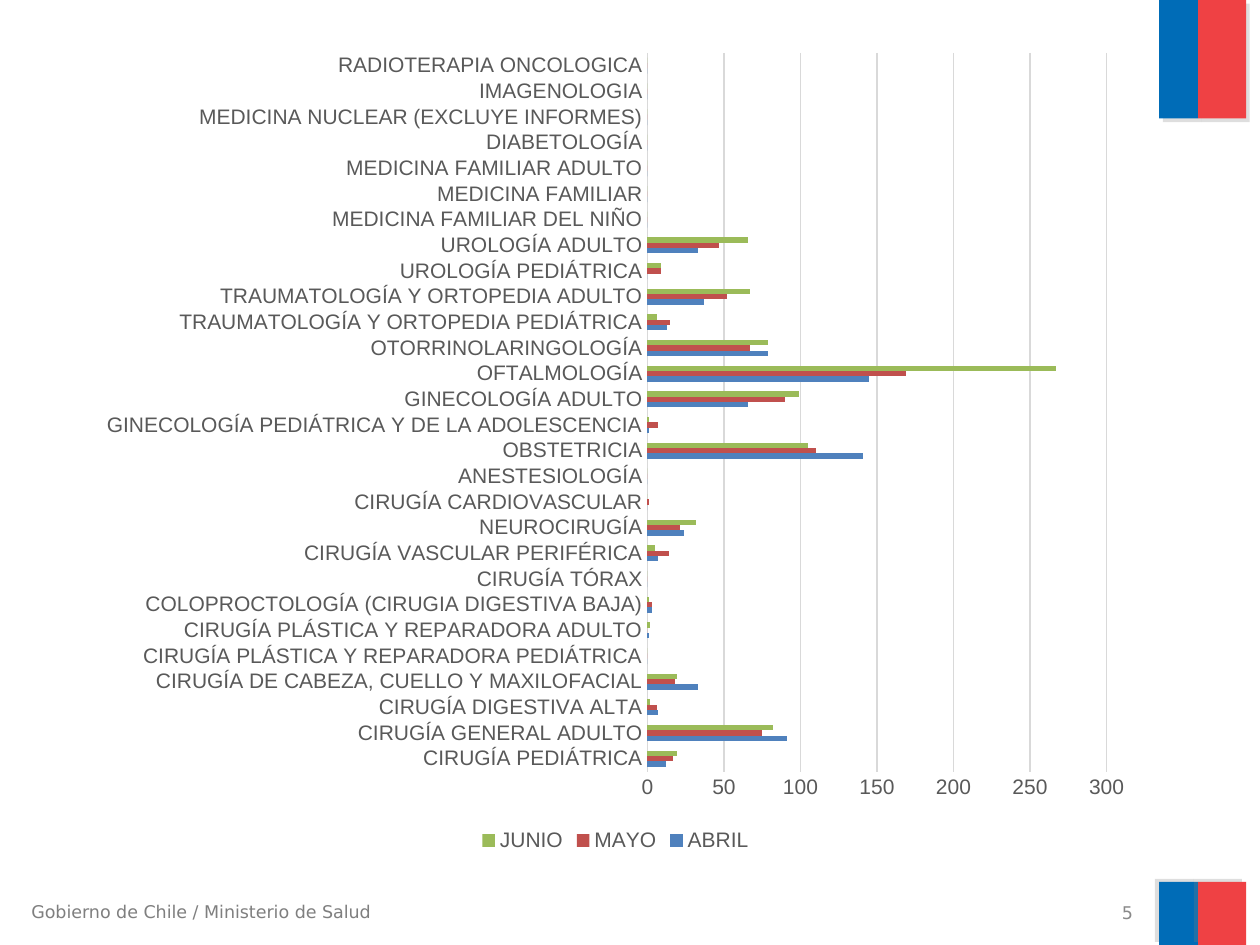
import pptx
import pptx.chart.data
import pptx.dml.color
import pptx.enum.chart
import pptx.enum.text
import pptx.oxml
import pptx.oxml.ns
import pptx.util

Inches = pptx.util.Inches
Pt = pptx.util.Pt
enum = pptx.enum.chart
ALIGN = pptx.enum.text.PP_ALIGN
ANCHOR = pptx.enum.text.MSO_ANCHOR

THEME = {
    "blue": "006CB7", "red": "EF4144", "shade": "808080",
    "foot": "7F7F7F", "page": "898989", "label": "595959", "grid": "D9D9D9",
    "months": ("4F81BD", "C0504D", "9BBB59"),
    "chart font": "Arial", "foot font": "DejaVu Sans",
    "chart size": 12, "foot size": 10, "line": 0.75,
}

MONTHS = ("ABRIL", "MAYO", "JUNIO")
ROWS = [
    ("CIRUGÍA PEDIÁTRICA", 12, 17, 19),
    ("CIRUGÍA GENERAL ADULTO", 91, 75, 82),
    ("CIRUGÍA DIGESTIVA ALTA", 7, 6, 2),
    ("CIRUGÍA DE CABEZA, CUELLO Y MAXILOFACIAL", 33, 18, 19),
    ("CIRUGÍA PLÁSTICA Y REPARADORA PEDIÁTRICA", 0, 0, 0),
    ("CIRUGÍA PLÁSTICA Y REPARADORA ADULTO", 1, 0, 2),
    ("COLOPROCTOLOGÍA (CIRUGIA DIGESTIVA BAJA)", 3, 3, 1),
    ("CIRUGÍA TÓRAX", 0, 0, 0),
    ("CIRUGÍA VASCULAR PERIFÉRICA", 7, 14, 5),
    ("NEUROCIRUGÍA", 24, 21, 32),
    ("CIRUGÍA CARDIOVASCULAR", 0, 1, 0),
    ("ANESTESIOLOGÍA", 0, 0, 0),
    ("OBSTETRICIA", 141, 110, 105),
    ("GINECOLOGÍA PEDIÁTRICA Y DE LA ADOLESCENCIA", 1, 7, 1),
    ("GINECOLOGÍA ADULTO", 66, 90, 99),
    ("OFTALMOLOGÍA", 145, 169, 267),
    ("OTORRINOLARINGOLOGÍA", 79, 67, 79),
    ("TRAUMATOLOGÍA Y ORTOPEDIA PEDIÁTRICA", 13, 15, 6),
    ("TRAUMATOLOGÍA Y ORTOPEDIA ADULTO", 37, 52, 67),
    ("UROLOGÍA PEDIÁTRICA", 0, 9, 9),
    ("UROLOGÍA ADULTO", 33, 47, 66),
    ("MEDICINA FAMILIAR DEL NIÑO", 0, 0, 0),
    ("MEDICINA FAMILIAR", 0, 0, 0),
    ("MEDICINA FAMILIAR ADULTO", 0, 0, 0),
    ("DIABETOLOGÍA", 0, 0, 0),
    ("MEDICINA NUCLEAR (EXCLUYE INFORMES)", 0, 0, 0),
    ("IMAGENOLOGIA", 0, 0, 0),
    ("RADIOTERAPIA ONCOLOGICA", 0, 0, 0),
]
CHART = (0.68, 0.29, 8.41, 6.51)

# left, width, colour of each stripe; top, height, shadow angle of each flag
STRIPES = [(9.2, 0.31, "blue"), (9.51, 0.38, "red")]
FLAGS = [(0, 0.94, 45), (7, 0.5, 215)]

# text, box, colour, format of the paragraph, format of the frame
NOTES = [
    ("Gobierno de Chile / Ministerio de Salud", (0.15, 7.1, 3.02, 0.27), "foot",
     {"alignment": ALIGN.LEFT}, {"vertical_anchor": ANCHOR.TOP}),
    ("5", (6.76, 7.14, 2.33, 0.21), "page",
     {"alignment": ALIGN.RIGHT}, {"vertical_anchor": ANCHOR.MIDDLE}),
]


def rgb(code):
    return pptx.dml.color.RGBColor.from_string(code)


def apply(item, values):
    for name, value in values.items():
        setattr(item, name, value)


def style(font, kind, color):
    apply(font, {"name": THEME[kind + " font"], "size": Pt(THEME[kind + " size"])})
    font.color.rgb = rgb(THEME[color])


def rule(line):
    line.color.rgb = rgb(THEME["grid"])
    line.width = Pt(THEME["line"])


def shade(shape, angle):
    """Give the shape a hard offset shadow."""
    shape.shadow.inherit = False
    effects = shape.element.spPr.find(pptx.oxml.ns.qn("a:effectLst"))
    effects.append(pptx.oxml.parse_xml(
        f'<a:outerShdw {pptx.oxml.ns.nsdecls("a")} blurRad="0" dist="{Pt(3)}" '
        f'dir="{angle * 60000}" algn="ctr" rotWithShape="0">'
        f'<a:srgbClr val="{THEME["shade"]}"><a:alpha val="25000"/></a:srgbClr>'
        '</a:outerShdw>'))


def add_flags(slide):
    for top, height, angle in FLAGS:
        for left, width, color in STRIPES:
            box = map(Inches, (left, top, width, height))
            stripe = slide.shapes.add_shape(1, *box)
            stripe.fill.solid()
            stripe.fill.fore_color.rgb = rgb(THEME[color])
            stripe.line.fill.background()
            shade(stripe, angle)


def add_notes(slide):
    for text, box, color, para, body in NOTES:
        frame = slide.shapes.add_textbox(*map(Inches, box)).text_frame
        apply(frame, {"word_wrap": True, "text": text, **body})
        first = frame.paragraphs[0]
        apply(first, para)
        style(first.runs[0].font, "foot", color)


def add_bars(slide):
    names, *values = zip(*ROWS)
    data = pptx.chart.data.CategoryChartData()
    data.categories = names
    for month, counts in zip(MONTHS, values):
        data.add_series(month, counts)
    kind = enum.XL_CHART_TYPE.BAR_CLUSTERED
    chart = slide.shapes.add_chart(kind, *map(Inches, CHART), data).chart
    apply(chart, {"has_title": False, "has_legend": True})
    style(chart.font, "chart", "label")
    apply(chart.legend, {"position": enum.XL_LEGEND_POSITION.BOTTOM,
                         "include_in_layout": False})
    style(chart.legend.font, "chart", "label")

    plot = chart.plots[0]
    apply(plot, {"gap_width": 182, "overlap": 0, "vary_by_categories": False})
    for series, color in zip(plot.series, THEME["months"]):
        series.invert_if_negative = False
        series.format.fill.solid()
        series.format.fill.fore_color.rgb = rgb(color)

    cats, vals = chart.category_axis, chart.value_axis
    for axis in (cats, vals):
        apply(axis, {"major_tick_mark": enum.XL_TICK_MARK.NONE,
                     "minor_tick_mark": enum.XL_TICK_MARK.NONE})
        style(axis.tick_labels.font, "chart", "label")
    rule(cats.format.line)
    apply(vals, {"has_major_gridlines": True, "minimum_scale": 0,
                 "maximum_scale": 300, "major_unit": 50})
    rule(vals.major_gridlines.format.line)
    vals.format.line.fill.background()


def main():
    deck = pptx.Presentation()
    apply(deck, {"slide_width": Inches(10), "slide_height": Inches(7.5)})
    slide = deck.slides.add_slide(deck.slide_layouts[6])
    add_flags(slide)
    add_notes(slide)
    add_bars(slide)
    deck.save("out.pptx")


if __name__ == "__main__":
    main()
